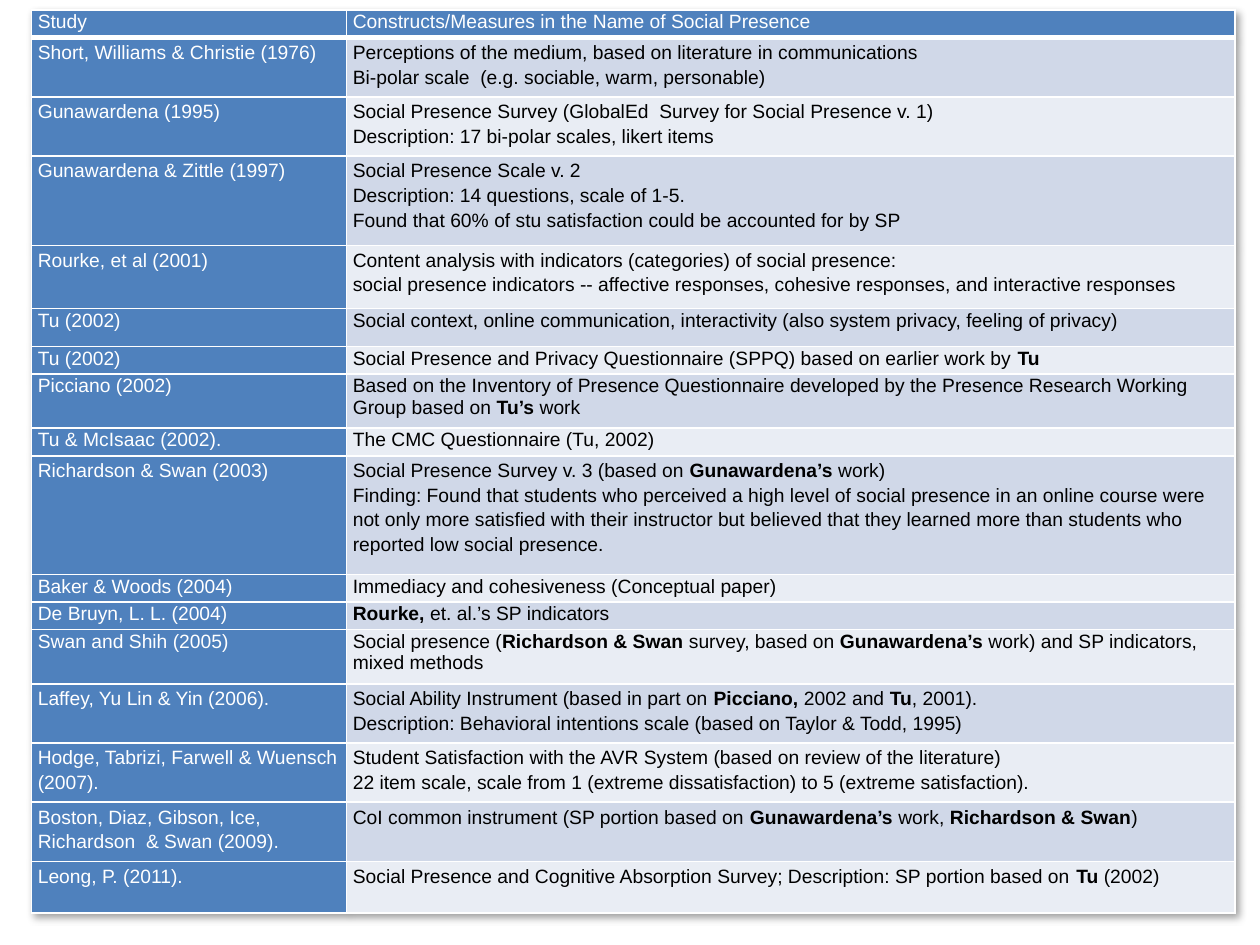
from lxml.etree import SubElement, fromstring
from pptx import Presentation
from pptx.dml.color import RGBColor
from pptx.oxml.ns import nsdecls, qn
from pptx.util import Inches, Pt

BLUE, WHITE, BLACK = "4F81BD", "FFFFFF", "000000"
BANDS = ("D0D8E8", "E9EDF4")
TIGHT, LOOSE = Pt(12.3), 1.15
COLUMN_WIDTHS = (2.5, 7.05)

# Row height, line spacing, study, measures (one string a paragraph, ** around bold)
STUDIES = [
    (0.22, TIGHT, "Study", ["Constructs/Measures in the Name of Social Presence"]),
    (0.47, LOOSE, "Short, Williams & Christie (1976)",
     ["Perceptions of the medium, based on literature in communications",
      "Bi-polar scale  (e.g. sociable, warm, personable)"]),
    (0.47, LOOSE, "Gunawardena (1995)",
     ["Social Presence Survey (GlobalEd  Survey for Social Presence v. 1)",
      "Description: 17 bi-polar scales, likert items"]),
    (0.71, LOOSE, "Gunawardena & Zittle (1997)",
     ["Social Presence Scale v. 2",
      "Description: 14 questions, scale of 1-5.",
      "Found that 60% of stu satisfaction could be accounted for by SP"]),
    (0.5, LOOSE, "Rourke, et al (2001)",
     ["Content analysis with indicators (categories) of social presence:",
      "social presence indicators -- affective responses, cohesive responses, "
      "and interactive responses"]),
    (0.3, TIGHT, "Tu (2002)",
     ["Social context, online communication, interactivity "
      "(also system privacy, feeling of privacy)"]),
    (0.22, TIGHT, "Tu (2002)",
     ["Social Presence and Privacy Questionnaire (SPPQ) based on earlier work by **Tu**"]),
    (0.43, TIGHT, "Picciano (2002)",
     ["Based on the Inventory of Presence Questionnaire developed by the Presence "
      "Research Working Group based on **Tu’s **work"]),
    (0.22, TIGHT, "Tu & McIsaac (2002).", ["The CMC Questionnaire (Tu, 2002)"]),
    (0.94, LOOSE, "Richardson & Swan (2003)",
     ["Social Presence Survey v. 3 (based on **Gunawardena’s **work)",
      "Finding: Found that students who perceived a high level of social presence in an "
      "online course were not only more satisfied with their instructor but believed that "
      "they learned more than students who reported low social presence."]),
    (0.22, TIGHT, "Baker & Woods (2004)",
     ["Immediacy and cohesiveness (Conceptual paper)"]),
    (0.22, TIGHT, "De Bruyn, L. L. (2004)", ["**Rourke, **et. al.’s SP indicators"]),
    (0.43, TIGHT, "Swan and Shih (2005)",
     ["Social presence (**Richardson & Swan **survey, based on **Gunawardena’s** work) "
      "and SP indicators, mixed methods"]),
    (0.47, LOOSE, "Laffey, Yu Lin & Yin (2006).",
     ["Social Ability Instrument (based in part on **Picciano, **2002 and **Tu**, 2001).",
      "Description: Behavioral intentions scale (based on Taylor & Todd, 1995)"]),
    (0.47, LOOSE, "Hodge, Tabrizi, Farwell & Wuensch (2007).",
     ["Student Satisfaction with the AVR System (based on review of the literature)",
      "22 item scale, scale from 1 (extreme dissatisfaction) to 5 (extreme satisfaction)."]),
    (0.47, LOOSE, "Boston, Diaz, Gibson, Ice, Richardson  & Swan (2009).",
     ["CoI common instrument (SP portion based on **Gunawardena’s** work, "
      "**Richardson & Swan**)"]),
    (0.41, LOOSE, "Leong, P. (2011).",
     ["Social Presence and Cognitive Absorption Survey; Description: SP portion "
      "based on **Tu** (2002)"]),
]


def rgb(color):
    return RGBColor.from_string(color)


def set_borders(cell, bottom_width):
    properties = cell._tc.get_or_add_tcPr()
    for side in "LRTB":
        width = bottom_width if side == "B" else 1
        line = SubElement(properties, qn(f"a:ln{side}"), w=str(Pt(width)))
        fill = SubElement(line, qn("a:solidFill"))
        SubElement(fill, qn("a:srgbClr"), val=WHITE)


def write_paragraph(paragraph, marked_text, color, spacing):
    """Write text in which ** switches bold on and off."""
    paragraph.line_spacing = spacing
    font = paragraph.font
    font.name, font.size, font.color.rgb = "Arial", Pt(11), rgb(color)
    for index, part in enumerate(marked_text.split("**")):
        if part:
            run = paragraph.add_run()
            run.text = part
            run.font.bold = index % 2 == 1


def fill_cell(cell, paragraphs, fill, color, spacing, bottom_width):
    cell.margin_left = cell.margin_right = Inches(0.05)
    cell.margin_top, cell.margin_bottom = Inches(0.01), 0
    set_borders(cell, bottom_width)
    cell.fill.solid()
    cell.fill.fore_color.rgb = rgb(fill)
    frame = cell.text_frame
    for index, marked_text in enumerate(paragraphs):
        paragraph = frame.add_paragraph() if index else frame.paragraphs[0]
        write_paragraph(paragraph, marked_text, color, spacing)


def add_table_shadow(table):
    table._tbl.tblPr.insert(0, fromstring(
        f'<a:effectLst {nsdecls("a")}>'
        '<a:outerShdw blurRad="50800" dist="38100" dir="2700000" algn="tl" rotWithShape="0">'
        '<a:srgbClr val="000000"><a:alpha val="40000"/></a:srgbClr>'
        '</a:outerShdw></a:effectLst>'))


def add_studies_table(slide):
    heights = [study[0] for study in STUDIES]
    table = slide.shapes.add_table(
        len(STUDIES), len(COLUMN_WIDTHS), Inches(0.25), Inches(0.08),
        Inches(sum(COLUMN_WIDTHS)), Inches(sum(heights))).table
    table.first_row = table.horz_banding = False
    add_table_shadow(table)
    for column, width in zip(table.columns, COLUMN_WIDTHS):
        column.width = Inches(width)
    for index, (height, spacing, study, measures) in enumerate(STUDIES):
        row = table.rows[index]
        row.height = Inches(height)
        is_header = index == 0
        bottom_width = 3 if is_header else 1
        fill, color = (BLUE, WHITE) if is_header else (BANDS[(index - 1) % 2], BLACK)
        fill_cell(row.cells[0], [study], BLUE, WHITE, spacing, bottom_width)
        fill_cell(row.cells[1], measures, fill, color, spacing, bottom_width)


def main():
    deck = Presentation()
    deck.slide_width, deck.slide_height = Inches(10), Inches(7.5)
    blank_layout = deck.slide_layouts[6]
    add_studies_table(deck.slides.add_slide(blank_layout))
    deck.save("out.pptx")


if __name__ == "__main__":
    main()
